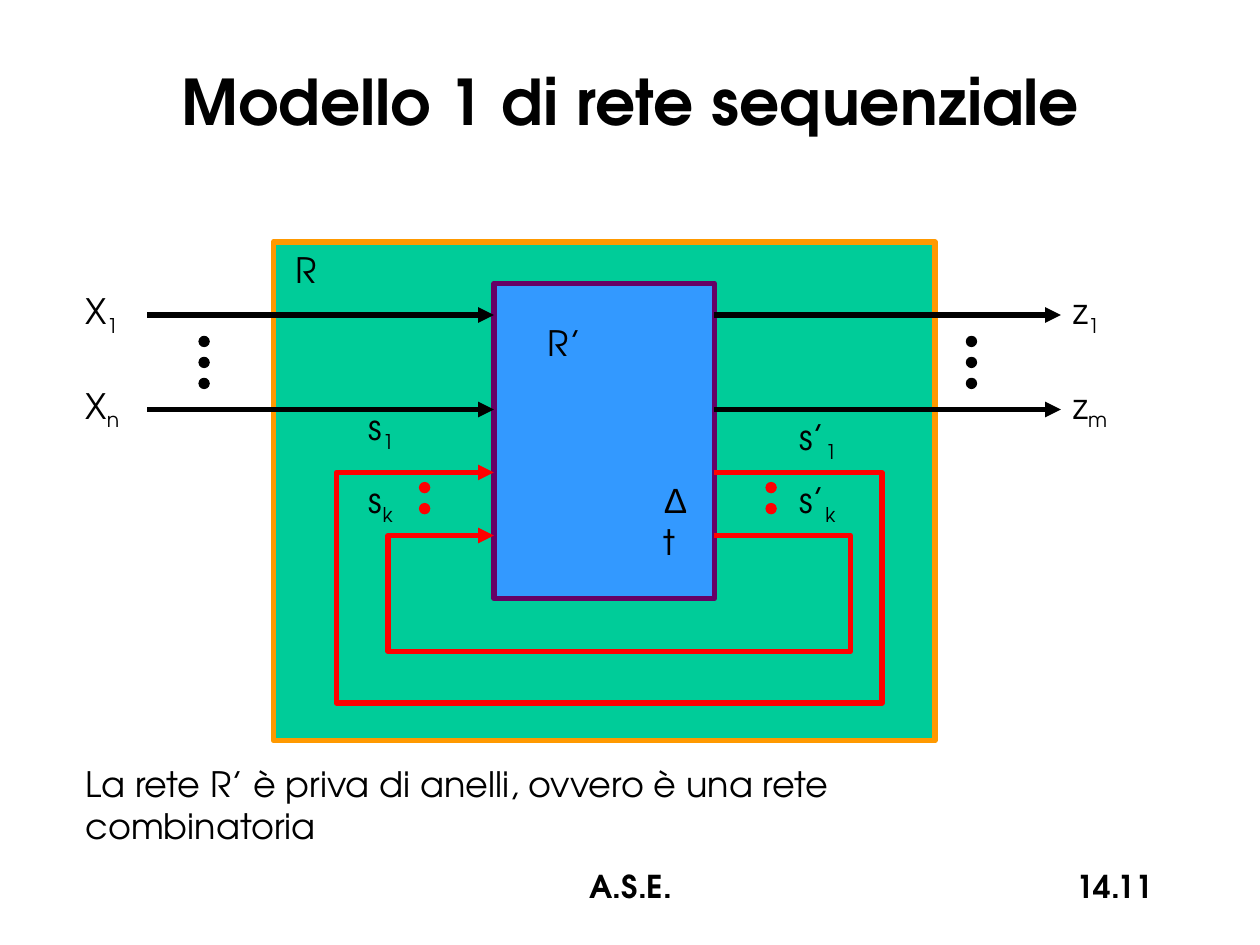
from dataclasses import dataclass

from lxml import etree
from pptx import Presentation
from pptx.dml.color import RGBColor
from pptx.enum.shapes import MSO_CONNECTOR, MSO_SHAPE
from pptx.enum.text import MSO_ANCHOR, PP_ALIGN
from pptx.oxml.ns import qn
from pptx.util import Inches, Pt

RECT, OVAL = MSO_SHAPE.RECTANGLE, MSO_SHAPE.OVAL
STRAIGHT = MSO_CONNECTOR.STRAIGHT
LEFT, CENTER, RIGHT = PP_ALIGN.LEFT, PP_ALIGN.CENTER, PP_ALIGN.RIGHT
MIDDLE = MSO_ANCHOR.MIDDLE
TITLE_ONLY = 5


@dataclass(frozen=True)
class Theme:
    font: str = "TeX Gyre Adventor"
    symbol_font: str = "Arial"
    title: int = 36
    body: int = 20
    footer: int = 18
    line: float = 3
    dot_line: float = 0.75
    dot: float = 0.08
    ink: str = "000000"
    feedback: str = "FF0000"
    outer_fill: str = "00CC99"
    outer_line: str = "FF9900"
    inner_fill: str = "3399FF"
    inner_line: str = "660066"


def rgb(color):
    return RGBColor.from_string(color)


def add_text(p, text, *, size, font, color, bold=False, sub=False):
    """Append one formatted run to a paragraph."""
    r = p.add_run()
    r.text = text
    r.font.size, r.font.name, r.font.bold = Pt(size), font, bold
    r.font.color.rgb = rgb(color)
    if sub:
        r.font._element.set("baseline", "-25000")


class Diagram:
    def __init__(self, slide, theme):
        self.s, self.theme = slide, theme

    def title(self, text, x, y, w, h):
        sp = self.s.shapes.title
        sp.left, sp.top, sp.width, sp.height = map(Inches, (x, y, w, h))
        tf = sp.text_frame
        tf.vertical_anchor = MIDDLE
        p = tf.paragraphs[0]
        p.alignment = CENTER
        add_text(p, text, size=self.theme.title, font=self.theme.font,
                 color=self.theme.ink, bold=True)

    def label(self, text, x, y, w, h=0.43, *, sub="", size=None, font=None,
              bold=False, align=LEFT):
        t = self.theme
        tf = self.s.shapes.add_textbox(*map(Inches, (x, y, w, h))).text_frame
        tf.word_wrap = True
        p = tf.paragraphs[0]
        p.alignment = align
        style = dict(size=size or t.body, color=t.ink, bold=bold)
        add_text(p, text, font=font or t.font, **style)
        if sub:
            add_text(p, sub, font=t.font, sub=True, **style)
        return p

    def shape(self, kind, x, y, w, h, fill, line, width):
        sp = self.s.shapes.add_shape(kind, *map(Inches, (x, y, w, h)))
        sp.shadow.inherit = False
        sp.fill.solid()
        sp.fill.fore_color.rgb = rgb(fill)
        self.stroke(sp, line, width)

    def dots(self, x, y, count, color):
        """Vertical ellipsis drawn as equally spaced dots."""
        t = self.theme
        for i in range(count):
            self.shape(OVAL, x, y + i / 6, t.dot, t.dot, color, color, t.dot_line)

    def stroke(self, sp, color, width, arrow=False):
        sp.line.color.rgb = rgb(color)
        sp.line.width = Pt(width)
        if arrow:
            ln = sp.line._get_or_add_ln()
            etree.SubElement(ln, qn("a:tailEnd"), type="triangle")

    def arrow(self, x1, x2, y):
        c = self.s.shapes.add_connector(STRAIGHT, *map(Inches, (x1, y, x2, y)))
        self.stroke(c, self.theme.ink, self.theme.line, arrow=True)
        etree.SubElement(c._element.spPr, qn("a:effectLst"))

    def loop(self, start, end, left, right, top, bottom):
        """Feedback path from the right side of a block round to its left."""
        points = [(right, top), (right, bottom), (left, bottom), (left, top), (end, top)]
        fb = self.s.shapes.build_freeform(Inches(start), Inches(top))
        fb.add_line_segments([(Inches(x), Inches(y)) for x, y in points], close=False)
        sp = fb.convert_to_shape()
        sp.shadow.inherit = False
        sp.fill.background()
        self.stroke(sp, self.theme.feedback, self.theme.line, arrow=True)


def main():
    prs = Presentation()
    prs.slide_width, prs.slide_height = Inches(10), Inches(7.5)
    t = Theme()
    d = Diagram(prs.slides.add_slide(prs.slide_layouts[TITLE_ONLY]), t)
    d.title("Modello 1 di rete sequenziale", 0.17, 0.17, 9.67, 1.25)

    # Sequential network R around combinational network R’
    block_left, block_right = 3.92, 5.67
    d.shape(RECT, 2.17, 1.92, 5.25, 3.96, t.outer_fill, t.outer_line, t.line)
    d.shape(RECT, block_left, 2.25, block_right - block_left, 2.5,
            t.inner_fill, t.inner_line, t.line)

    # Inputs and outputs
    for x1, x2, dots_x in ((1.17, block_left, 1.58), (block_right, 8.42, 7.67)):
        for y in (2.5, 3.25):
            d.arrow(x1, x2, y)
        d.dots(dots_x, 2.67, 3, t.ink)

    # State feedback
    d.loop(block_right, block_left, 2.67, 7, 3.75, 5.58)
    d.loop(block_right, block_left, 3.08, 6.75, 4.25, 5.17)
    for x in (3.33, 6.08):
        d.dots(x, 3.83, 2, t.feedback)

    # Network names and signal labels
    d.label("R", 2.25, 1.92, 0.4)
    d.label("R’", 4.25, 2.5, 0.49)
    for text, sub, x, y, w in (
        ("X", "1", 0.58, 2.25, 0.48), ("X", "n", 0.58, 3, 0.56),
        ("z", "1", 8.42, 2.25, 0.48), ("z", "m", 8.42, 3, 0.67),
        ("s", "1", 2.83, 3.17, 0.46), ("s", "k", 2.83, 3.75, 0.56),
        ("s’", "1", 6.25, 3.25, 0.55), ("s’", "k", 6.25, 3.75, 0.56),
    ):
        d.label(text, x, y, w, sub=sub)
    p = d.label("Δ", 5.17, 3.75, 0.47, font=t.symbol_font)
    add_text(p, "t", size=t.body, font=t.font, color=t.ink)

    # Caption and footer
    d.label("La rete R’ è priva di anelli, ovvero è una rete combinatoria", 0.58, 6, 7.98)
    footer = dict(size=t.footer, bold=True)
    d.label("14.11", 7.17, 6.83, 2.08, 0.5, align=RIGHT, **footer)
    d.label("A.S.E.", 3.42, 6.83, 3.17, 0.5, align=CENTER, **footer)

    prs.save("out.pptx")


if __name__ == "__main__":
    main()
